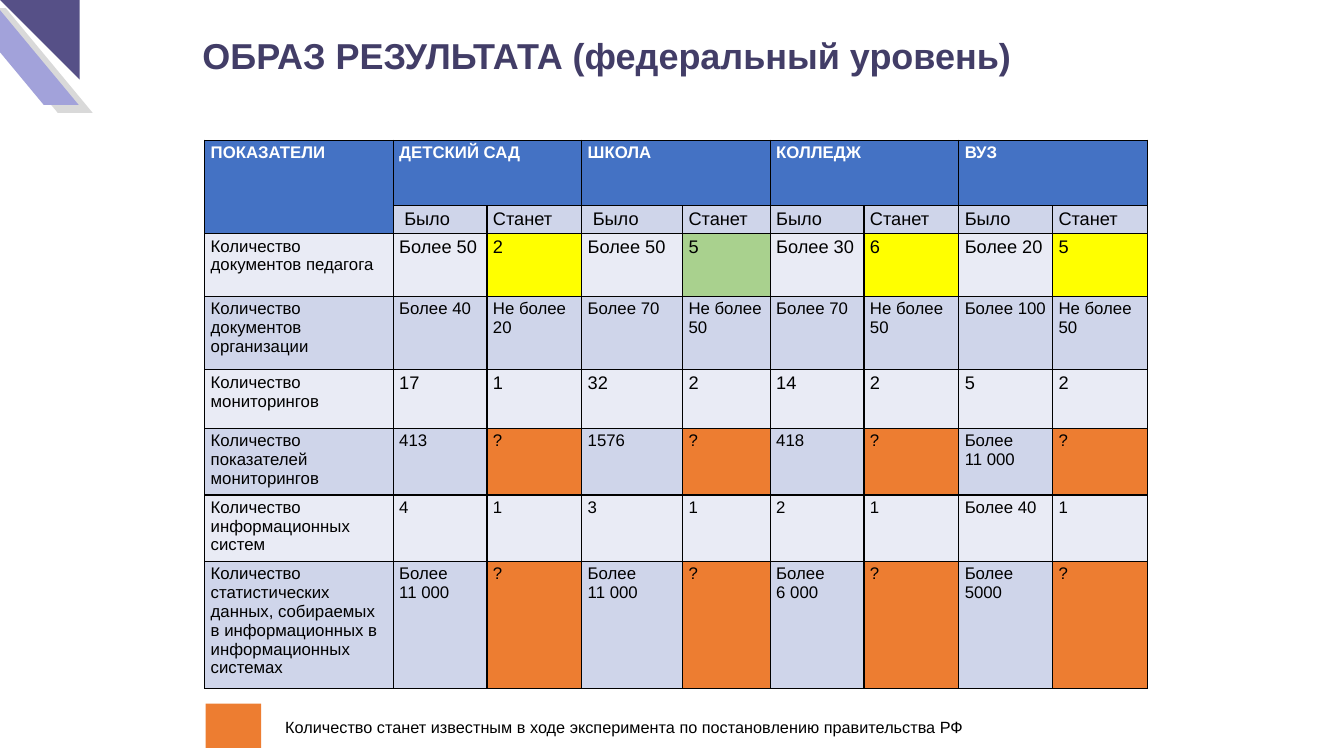
from lxml import etree
from pptx import Presentation
from pptx.dml.color import RGBColor
from pptx.enum import shapes
from pptx.oxml import parse_xml
from pptx.util import Inches, Pt

WHITE, BLACK = "FFFFFF", "000000"
BLUE, BAND_DARK, BAND_LIGHT = "4472C4", "CFD5EA", "E9EBF5"
ORANGE, YELLOW, GREEN = "ED7D31", "FFFF00", "A9D18E"
MAIN_NS = "http://schemas.openxmlformats.org/drawingml/2006/main"


def paint(target, color):
    target.fill.solid()
    target.fill.fore_color.rgb = RGBColor.from_string(color)


def write(frame, content, size=12, color=BLACK, bold=False):
    """Fill a text frame, one paragraph per line of content."""
    frame.word_wrap = True
    frame.text = content
    for paragraph in frame.paragraphs:
        paragraph.font.name = "Arial"
        paragraph.font.size = Pt(size)
        paragraph.font.bold = bold
        paragraph.font.color.rgb = RGBColor.from_string(color)


deck = Presentation()
deck.slide_width, deck.slide_height = Inches(13.33), Inches(7.5)
slide = deck.slides.add_slide(deck.slide_layouts[6])

# Corner ornament and legend swatch
KIND = shapes.MSO_SHAPE
for kind, left, top, width, height, color in [
    (KIND.PARALLELOGRAM, -0.29, 0.08, 1.21, 1.04, "D9D9D9"),
    (KIND.PARALLELOGRAM, -0.43, 0, 1.21, 1.04, "A2A2DA"),
    (KIND.RIGHT_TRIANGLE, 0, 0, 0.79, 0.79, "565087"),
    (KIND.RECTANGLE, 2.04, 6.98, 0.55, 0.44, ORANGE),
]:
    block = slide.shapes.add_shape(kind, Inches(left), Inches(top), Inches(width), Inches(height))
    block.shadow.inherit = False
    block.line.fill.background()
    paint(block, color)
    if kind == KIND.PARALLELOGRAM:
        block.adjustments[0] = 0.83
        block.element.spPr.xfrm.set("flipH", "1")
    elif kind == KIND.RIGHT_TRIANGLE:
        block.rotation = 180

# Title and legend
title = slide.shapes.add_textbox(Inches(1.91), Inches(0.28), Inches(9.48), Inches(0.53))
write(title.text_frame, "ОБРАЗ РЕЗУЛЬТАТА (федеральный уровень)", size=25.7, color="423D67", bold=True)
legend = slide.shapes.add_textbox(Inches(2.73), Inches(7.07), Inches(8.8), Inches(0.3))
write(
    legend.text_frame,
    "Количество станет известным в ходе эксперимента по постановлению правительства РФ",
    size=11.6,
)

# Indicators table
indicators = [
    ["ПОКАЗАТЕЛИ", "ДЕТСКИЙ САД", "", "ШКОЛА", "", "КОЛЛЕДЖ", "", "ВУЗ", ""],
    ["", " Было", "Станет", " Было", "Станет", "Было", "Станет", "Было", "Станет"],
    ["Количество документов педагога",
     "Более 50", "2", "Более 50", "5", "Более 30", "6", "Более 20", "5"],
    ["Количество документов организации",
     "Более 40", "Не более 20", "Более 70", "Не более 50",
     "Более 70", "Не более 50", "Более 100", "Не более 50"],
    ["Количество мониторингов", "17", "1", "32", "2", "14", "2", "5", "2"],
    ["Количество показателей мониторингов",
     "413", "?", "1576", "?", "418", "?", "Более\n11 000", "?"],
    ["Количество информационных систем", "4", "1", "3", "1", "2", "1", "Более 40", "1"],
    ["Количество статистических данных, собираемых в информационных в информационных системах",
     "Более\n11 000", "?", "Более\n11 000", "?", "Более\n6 000", "?", "Более 5000", "?"],
]
column_widths = [1.87, 0.93, 0.94, 1, 0.87, 0.93, 0.94, 0.93, 0.94]
row_heights = [0.65, 0.28, 0.62, 0.73, 0.58, 0.66, 0.66, 1.26]
highlights = {(2, 2): YELLOW, (2, 4): GREEN, (2, 6): YELLOW, (2, 8): YELLOW}
large_rows = {1, 2, 4}

table = slide.shapes.add_table(
    len(row_heights), len(column_widths),
    Inches(2.03), Inches(1.39), Inches(sum(column_widths)), Inches(sum(row_heights)),
).table
for column, width in zip(table.columns, column_widths):
    column.width = Inches(width)
for row, height in zip(table.rows, row_heights):
    row.height = Inches(height)

table.cell(0, 0).merge(table.cell(1, 0))
for first in range(1, 9, 2):
    table.cell(0, first).merge(table.cell(0, first + 1))

border = etree.Element(f"{{{MAIN_NS}}}ln", w=str(Pt(1)))
line_fill = etree.SubElement(border, f"{{{MAIN_NS}}}solidFill")
etree.SubElement(line_fill, f"{{{MAIN_NS}}}srgbClr", val=BLACK)
border_xml = etree.tostring(border, encoding="unicode")

for r, values in enumerate(indicators):
    for c, value in enumerate(values):
        cell = table.cell(r, c)
        cell.margin_left = cell.margin_right = Inches(0.06)
        cell.margin_top = cell.margin_bottom = Inches(0.03)
        for side in ("lnL", "lnR", "lnT", "lnB"):
            edge = parse_xml(border_xml)
            edge.tag = f"{{{MAIN_NS}}}{side}"
            cell._tc.tcPr.append(edge)

        header = r == 0
        band = BLUE if header else BAND_DARK if r % 2 else BAND_LIGHT
        paint(cell, ORANGE if value == "?" else highlights.get((r, c), band))
        write(
            cell.text_frame, value,
            size=13 if r in large_rows and c > 0 else 12,
            color=WHITE if header else BLACK,
            bold=header,
        )

deck.save("out.pptx")
